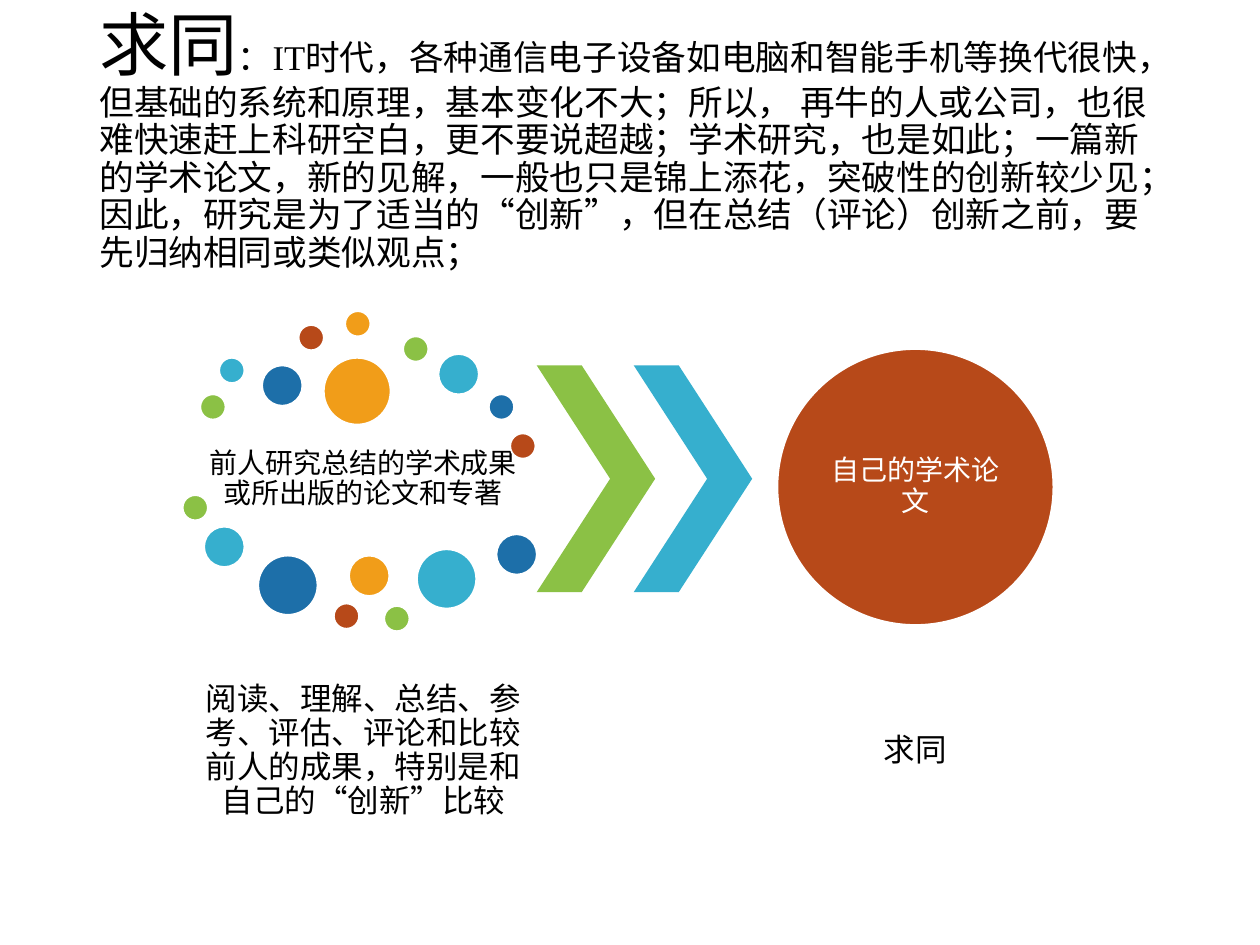
import itertools

import pptx
import pptx.dml.color
import pptx.enum.shapes
import pptx.enum.text
import pptx.util

PX = 9144  # EMU in one px, at 100 px to the inch
FONT = "Times New Roman"
HUES = {
    "green": "8BC145",
    "teal": "36AFCE",
    "blue": "1D6FA9",
    "red": "B74919",
    "orange": "F19D19",
    "black": "000000",
    "white": "FFFFFF",
}
CYCLE = ["green", "teal", "blue", "red", "orange"]
KINDS = pptx.enum.shapes.MSO_SHAPE
ALIGN = pptx.enum.text.PP_ALIGN

TITLE = [
    ("求同", 39.6),
    ("：IT时代，各种通信电子设备如电脑和智能手机等换代很快，但基础的系统和原理，"
     "基本变化不大；所以， 再牛的人或公司，也很难快速赶上科研空白，更不要说超越；"
     "学术研究，也是如此；一篇新的学术论文，新的见解，一般也只是锦上添花，"
     "突破性的创新较少见；因此，研究是为了适当的“创新”，"
     "但在总结（评论）创新之前，要先归纳相同或类似观点；", 19.8),
]
PRIOR = "前人研究总结的学术成果或所出版的论文和专著"
STEPS = "阅读、理解、总结、参考、评估、评论和比较前人的成果，特别是和自己的“创新”比较"

# left, top, width of each dot; colours follow CYCLE
DOTS = [
    (159, 313, 20), (174, 284, 20), (208, 290, 32), (237, 258, 20),
    (257, 284, 53), (320, 267, 20), (348, 281, 32), (388, 313, 20),
    (405, 344, 20), (274, 247, 20), (145, 393, 20), (162, 418, 32),
    (205, 441, 47), (265, 479, 20), (277, 441, 32), (305, 481, 20),
    (331, 436, 47), (394, 424, 32),
]


def rgb(hue):
    return pptx.dml.color.RGBColor.from_string(HUES[hue])


def place(*box):
    return [pptx.util.Emu(n * PX) for n in box]


def add_text(slide, box, runs, hue="black", align=ALIGN.CENTER, inset=3, gap=10):
    """Add a middle-anchored text box; inset is all round, gap only at the sides."""
    frame = slide.shapes.add_textbox(*place(*box)).text_frame
    frame.word_wrap = True
    frame.vertical_anchor = pptx.enum.text.MSO_ANCHOR.MIDDLE
    frame.margin_left = frame.margin_right = pptx.util.Emu(gap * PX)
    frame.margin_top = frame.margin_bottom = pptx.util.Emu(inset * PX)
    para = frame.paragraphs[0]
    para.alignment = align
    para.line_spacing = 0.9
    for text, size in runs:
        run = para.add_run()
        run.text = text
        run.font.size = pptx.util.Pt(size)
        run.font.name = FONT
        run.font.color.rgb = rgb(hue)


def add_label(slide, box, text, size, inset, hue="black"):
    add_text(slide, box, [(text, size)], hue, inset=inset, gap=inset)


def add_solid(slide, kind, box, hue):
    shape = slide.shapes.add_shape(kind, *place(*box))
    shape.shadow.inherit = False
    shape.fill.solid()
    shape.fill.fore_color.rgb = rgb(hue)
    return shape


def add_disc(slide, left, top, size, hue):
    disc = add_solid(slide, KINDS.OVAL, (left, top, size, size), hue)
    disc.line.color.rgb = rgb("white")
    disc.line.width = pptx.util.Pt(1)


def add_chevron(slide, left, hue):
    arrow = add_solid(slide, KINDS.CHEVRON, (left, 290, 94, 180), hue)
    arrow.adjustments[0] = 0.62
    arrow.line.fill.background()


def main():
    deck = pptx.Presentation()
    deck.slide_width, deck.slide_height = place(1000, 750)
    slide = deck.slides.add_slide(deck.slide_layouts[6])

    add_text(slide, (69, 40, 862, 145), TITLE, align=ALIGN.LEFT, inset=5)
    add_label(slide, (160, 338, 257, 85), PRIOR, 16, 2)
    add_label(slide, (160, 517, 257, 159), STEPS, 18, 3)

    for dot, hue in zip(DOTS, itertools.cycle(CYCLE)):
        add_disc(slide, *dot, hue)
    for left, hue in [(426, "green"), (503, "teal")]:
        add_chevron(slide, left, hue)

    add_disc(slide, 617, 277, 219, "red")
    add_label(slide, (649, 309, 155, 155), "自己的学术论文", 16, 0, "white")
    add_label(slide, (598, 517, 257, 159), "求同", 18, 3)
    deck.save("out.pptx")


if __name__ == "__main__":
    main()
